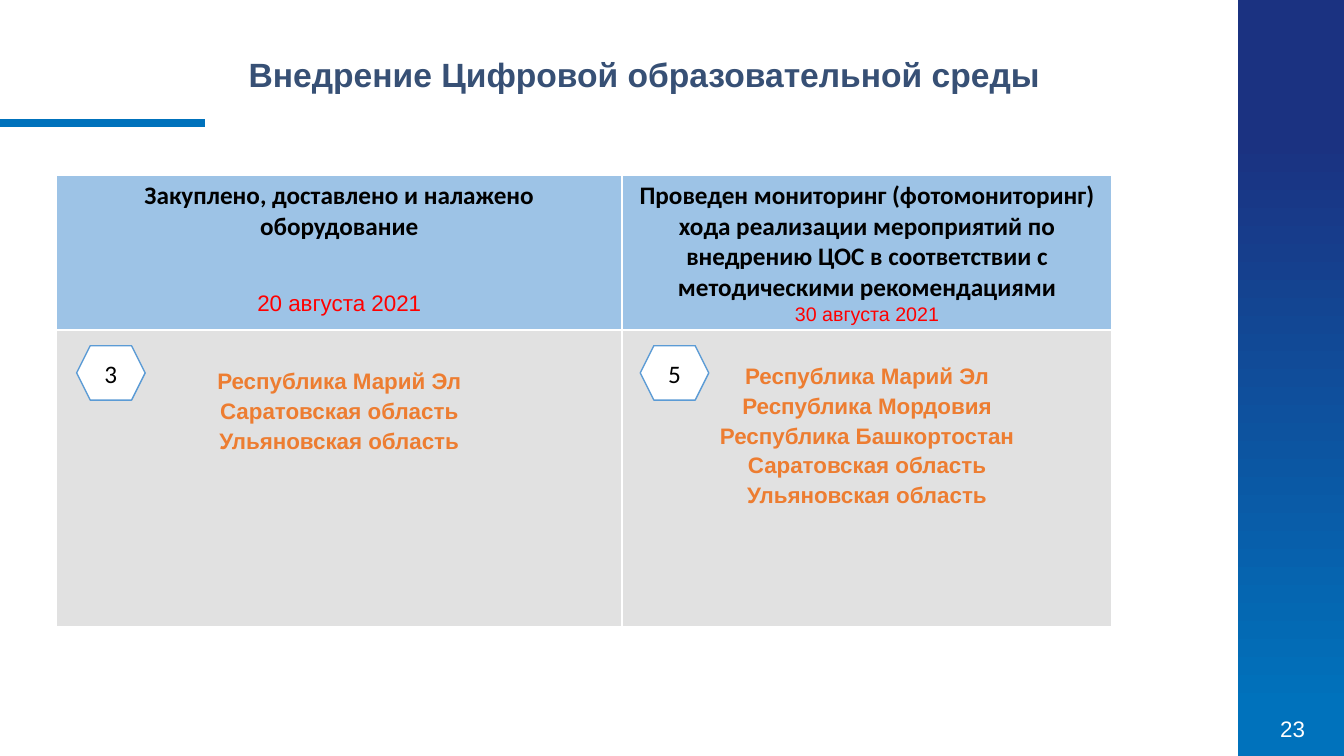
from lxml import etree
from pptx import Presentation
from pptx.dml.color import RGBColor
from pptx.enum.shapes import MSO_CONNECTOR, MSO_SHAPE
from pptx.enum.text import MSO_ANCHOR, PP_ALIGN
from pptx.oxml.ns import qn
from pptx.util import Inches, Pt

CENTER = PP_ALIGN.CENTER
MIDDLE = MSO_ANCHOR.MIDDLE

WHITE = RGBColor(0xFF, 0xFF, 0xFF)
BLACK = RGBColor(0, 0, 0)
RED = RGBColor(0xFF, 0, 0)
ORANGE = RGBColor(0xED, 0x7D, 0x31)
NAVY = RGBColor(0x1B, 0x32, 0x81)
BLUE = RGBColor(0x00, 0x72, 0xBC)
TITLE_BLUE = RGBColor(0x37, 0x50, 0x75)
OUTLINE_BLUE = RGBColor(0x5B, 0x9B, 0xD5)
HEADER_FILL = RGBColor(0x9D, 0xC3, 0xE6)
BODY_FILL = RGBColor(0xE1, 0xE1, 0xE1)

TITLE = "Внедрение Цифровой образовательной среды"
PAGE_NUMBER = "23"
STAGES = [
    {
        "task": "Закуплено, доставлено и налажено оборудование",
        "date": "20 августа 2021", "date_size": 16, "date_gap": 35,
        "regions": ["Республика Марий Эл", "Саратовская область", "Ульяновская область"],
        "width": 5.61, "top_margin": 0.34, "side_margin": 0.1, "badge_left": 0.76,
    },
    {
        "task": "Проведен мониторинг (фотомониторинг) хода реализации мероприятий "
                "по внедрению ЦОС в соответствии с методическими рекомендациями",
        "date": "30 августа 2021", "date_size": 14, "date_gap": 0,
        "regions": ["Республика Марий Эл", "Республика Мордовия", "Республика Башкортостан",
                    "Саратовская область", "Ульяновская область"],
        "width": 4.86, "top_margin": 0.29, "side_margin": 0, "badge_left": 6.35,
    },
]
ROW_HEIGHTS = [1.46, 2.94]


def format_paragraph(para, size, font, color, bold=False):
    para.alignment = CENTER
    para.font.size = Pt(size)
    para.font.name = font
    para.font.color.rgb = color
    para.font.bold = bold


def style_cell(cell, color):
    """Give the cell thin white borders, then its fill."""
    properties = cell._tc.get_or_add_tcPr()
    for side in ("a:lnL", "a:lnR", "a:lnT", "a:lnB"):
        border = etree.SubElement(properties, qn(side), w=str(Pt(1)))
        fill = etree.SubElement(border, qn("a:solidFill"))
        etree.SubElement(fill, qn("a:srgbClr"), val=str(WHITE))
    cell.fill.solid()
    cell.fill.fore_color.rgb = color


def add_side_band(page):
    band = page.shapes.add_shape(MSO_SHAPE.RECTANGLE, Inches(12.28), 0, Inches(1.05), Inches(7.5))
    band.shadow.inherit = False
    band.line.fill.background()
    band.fill.gradient()
    band.fill.gradient_angle = 270
    for stop, position, color in zip(band.fill.gradient_stops, (0.18, 0.94), (NAVY, BLUE)):
        stop.position = position
        stop.color.rgb = color

    box = page.shapes.add_textbox(Inches(12.42), Inches(7.02), Inches(0.8), Inches(0.41))
    frame = box.text_frame
    frame.word_wrap = True
    frame.vertical_anchor = MIDDLE
    frame.text = PAGE_NUMBER
    format_paragraph(frame.paragraphs[0], 16, "Arial", WHITE)


def add_title(page):
    title = page.shapes.title
    title.left, title.top, title.width, title.height = map(Inches, (1.89, 0.48, 9, 0.5))
    title.text_frame.text = TITLE
    title.text_frame.vertical_anchor = MIDDLE
    format_paragraph(title.text_frame.paragraphs[0], 24, "Arial", TITLE_BLUE, True)

    rule = page.shapes.add_connector(
        MSO_CONNECTOR.STRAIGHT, 0, Inches(1.22), Inches(2.03), Inches(1.22))
    rule.line.color.rgb = BLUE
    rule.line.width = Pt(6)
    etree.SubElement(rule._element.spPr, qn("a:effectLst"))


def add_stage_table(page):
    width = sum(stage["width"] for stage in STAGES)
    table = page.shapes.add_table(
        len(ROW_HEIGHTS), len(STAGES), Inches(0.56), Inches(1.74),
        Inches(width), Inches(sum(ROW_HEIGHTS))).table
    table.first_row = False
    table.horz_banding = False
    for row, height in zip(table.rows, ROW_HEIGHTS):
        row.height = Inches(height)

    for index, stage in enumerate(STAGES):
        table.columns[index].width = Inches(stage["width"])
        header, body = table.cell(0, index), table.cell(1, index)
        style_cell(header, HEADER_FILL)
        style_cell(body, BODY_FILL)

        header.text = stage["task"] + "\n" + stage["date"]
        task, date = header.text_frame.paragraphs
        format_paragraph(task, 18, "Calibri", BLACK, True)
        format_paragraph(date, stage["date_size"], "Arial", RED)
        date.space_before = Pt(stage["date_gap"])

        body.margin_top = Inches(stage["top_margin"])
        body.margin_left = body.margin_right = Inches(stage["side_margin"])
        body.text = "\n".join(stage["regions"])
        for para in body.text_frame.paragraphs:
            format_paragraph(para, 16, "Arial", ORANGE, True)
            para.line_spacing = 1.2


def add_count_badge(page, stage):
    badge = page.shapes.add_shape(
        MSO_SHAPE.HEXAGON, Inches(stage["badge_left"]), Inches(3.43), Inches(0.68), Inches(0.54))
    badge.shadow.inherit = False
    badge.fill.solid()
    badge.fill.fore_color.rgb = WHITE
    badge.line.color.rgb = OUTLINE_BLUE
    badge.line.width = Pt(1)
    frame = badge.text_frame
    frame.vertical_anchor = MIDDLE
    frame.text = str(len(stage["regions"]))
    format_paragraph(frame.paragraphs[0], 18, "Calibri", BLACK)


def main():
    deck = Presentation()
    deck.slide_width, deck.slide_height = Inches(13.33), Inches(7.5)
    page = deck.slides.add_slide(deck.slide_layouts[5])
    add_side_band(page)
    add_title(page)
    add_stage_table(page)
    for stage in STAGES:
        add_count_badge(page, stage)
    deck.save("out.pptx")


if __name__ == "__main__":
    main()
